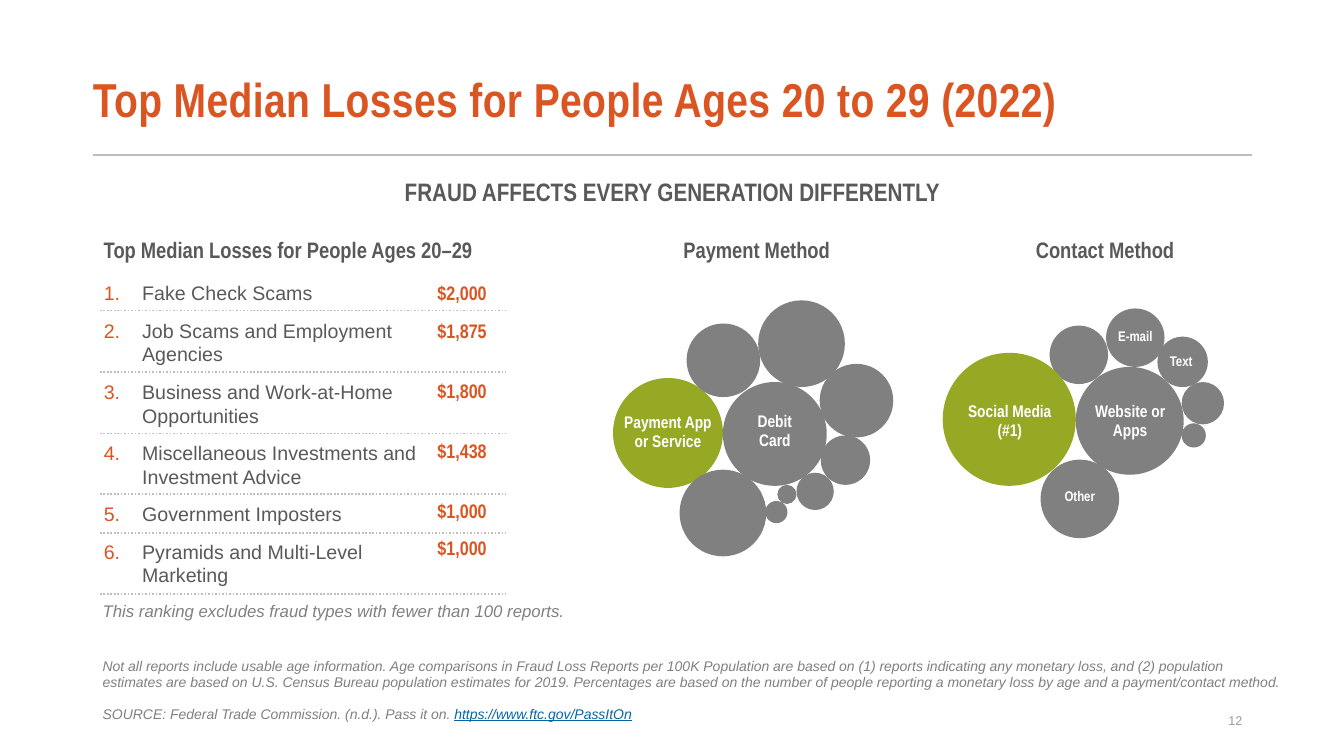
"""Build the slide on median fraud losses for people in their twenties."""
from lxml.etree import SubElement
from pptx import Presentation
from pptx.dml.color import RGBColor
from pptx.enum.dml import MSO_LINE
from pptx.enum.shapes import MSO_CONNECTOR, MSO_SHAPE
from pptx.enum.text import MSO_ANCHOR, MSO_AUTO_SIZE, PP_ALIGN
from pptx.oxml.ns import qn
from pptx.util import Inches, Pt

SANS, SLIM = "Arial", "Arial Narrow"
RUST, DARK, GREY, LIME = "DA5521", "595959", "808080", "97A825"
WHITE, BLUE = "FFFFFF", "0665A4"
LEFT, MID, RIGHT = PP_ALIGN.LEFT, PP_ALIGN.CENTER, PP_ALIGN.RIGHT
hue = RGBColor.from_string


def style(para, size, color, face, bold=False, slant=False):
    font = para.font
    font.size, font.name = Pt(size), face
    font.bold, font.italic = bold, slant
    font.color.rgb = hue(color)


def label(text, box, size, color, face=SLIM, bold=True, slant=False, align=MID):
    frame = slide.shapes.add_textbox(*map(Inches, box)).text_frame
    frame.word_wrap = True
    para = frame.paragraphs[0]
    para.text = text
    para.alignment = align
    para.line_spacing = 0.95
    style(para, size, color, face, bold, slant)
    return frame


deck = Presentation()
deck.slide_width, deck.slide_height = Inches(13.33), Inches(7.5)
slide = deck.slides.add_slide(deck.slide_layouts[1])

title, body = slide.placeholders
title.left, title.top = Inches(0.92), Inches(0.54)
title.width, title.height = Inches(11.5), Inches(0.94)
frame = title.text_frame
frame.auto_size = MSO_AUTO_SIZE.NONE
frame.vertical_anchor = MSO_ANCHOR.MIDDLE
frame.margin_left = 0
head = frame.paragraphs[0]
head.text = "Top Median Losses for People Ages 20 to 29 (2022)"
head.alignment = LEFT
head.line_spacing = 0.9
style(head, 34, RUST, SLIM, bold=True)
head.runs[0].font._element.set("spc", "30")

circles = [
    (10.67, 3.64, 1.07, GREY), (10.41, 3.23, 0.58, GREY),
    (10.97, 3.06, 0.58, GREY), (11.48, 3.34, 0.5, GREY),
    (11.72, 3.79, 0.42, GREY), (11.72, 4.2, 0.24, GREY),
    (6.08, 3.75, 1.09, LIME), (7.17, 3.79, 1.03, GREY),
    (6.74, 4.66, 0.86, GREY), (7.52, 2.98, 0.86, GREY),
    (8.13, 3.61, 0.73, GREY), (6.81, 3.21, 0.73, GREY),
    (8.14, 4.32, 0.49, GREY), (7.9, 4.69, 0.37, GREY),
    (7.71, 4.81, 0.19, GREY), (7.59, 4.97, 0.22, GREY),
    (9.35, 3.5, 1.32, LIME), (10.32, 4.56, 0.78, GREY),
]
for x, y, size, color in circles:
    dot = slide.shapes.add_shape(
        MSO_SHAPE.OVAL, Inches(x), Inches(y), Inches(size), Inches(size))
    dot.shadow.inherit = False
    dot.fill.solid()
    dot.fill.fore_color.rgb = hue(color)
    dot.line.fill.background()

tags = [
    ("Payment App or Service", (6.08, 4.05, 1.09, 0.48), 12),
    ("Debit\nCard", (7.14, 4.04, 1.09, 0.48), 12),
    ("Social Media\n(#1)", (9.47, 3.94, 1.09, 0.48), 12),
    ("Website or Apps", (10.68, 3.94, 1.06, 0.48), 12),
    ("E-mail", (10.97, 3.21, 0.58, 0.26), 10),
    ("Text", (11.48, 3.46, 0.47, 0.26), 10),
    ("Other", (10.31, 4.8, 0.8, 0.26), 10),
]
for text, box, size in tags:
    label(text, box, size, WHITE)

label("FRAUD AFFECTS EVERY GENERATION DIFFERENTLY",
      (0.93, 1.72, 11.48, 0.39), 18, DARK)
label("Top Median Losses for People Ages 20–29",
      (0.93, 2.31, 4.55, 0.36), 16, DARK, align=LEFT)
label("Payment Method", (6.16, 2.31, 2.69, 0.36), 16, DARK)
label("Contact Method", (9.42, 2.31, 3.08, 0.36), 16, DARK)

losses = [
    ("Fake Check Scams", "$2,000", 0),
    ("Job Scams and Employment Agencies", "$1,875", 0),
    ("Business and Work-at-Home Opportunities", "$1,800", 16),
    ("Miscellaneous Investments and Investment Advice", "$1,438", 16),
    ("Government Imposters", "$1,000", 16),
    ("Pyramids and Multi-Level Marketing", "$1,000", 0),
]
body.left, body.top = Inches(0.93), Inches(2.74)
body.width, body.height = Inches(3.33), Inches(3.16)
names = body.text_frame
names.auto_size = MSO_AUTO_SIZE.NONE
sums = slide.shapes.add_textbox(
    Inches(4.24), Inches(2.74), Inches(1.45), Inches(2.92)).text_frame
sums.word_wrap = True
for i, (name, loss, gap) in enumerate(losses):
    item = names.add_paragraph() if i else names.paragraphs[0]
    item.text = name
    props = item._p.get_or_add_pPr()
    props.set("marL", str(Inches(0.38)))
    props.set("indent", str(-Inches(0.38)))
    tint = SubElement(props, qn("a:buClr"))
    SubElement(tint, qn("a:srgbClr"), val=RUST)
    SubElement(props, qn("a:buFont"), typeface=SANS)
    SubElement(props, qn("a:buAutoNum"), type="arabicPeriod")
    item.space_before, item.space_after = Pt(0), Pt(10)
    style(item, 14, DARK, SANS)

    cost = sums.add_paragraph() if i else sums.paragraphs[0]
    cost.text = loss
    cost.space_before, cost.space_after = Pt(gap), Pt(10)
    style(cost, 14, RUST, SLIM, bold=True)

rules = [(0.92, 12.42, 1.54, "BDBDBD", 1.5, MSO_LINE.SOLID)]
for y in (3.08, 3.69, 4.3, 4.9, 5.29, 5.89):
    rules.append((0.99, 5.01, y, "BFBFBF", 1.25, MSO_LINE.ROUND_DOT))
for start, end, y, color, width, dash in rules:
    rule = slide.shapes.add_connector(
        MSO_CONNECTOR.STRAIGHT, Inches(start), Inches(y), Inches(end), Inches(y))
    rule.line.color.rgb = hue(color)
    rule.line.width = Pt(width)
    rule.line.dash_style = dash
    SubElement(rule._element.spPr, qn("a:effectLst"))

label("This ranking excludes fraud types with fewer than 100 reports.",
      (0.92, 5.92, 4.8, 0.29), 12, GREY, SANS, False, True, LEFT)
label("Not all reports include usable age information. Age comparisons in Fraud "
      "Loss Reports per 100K Population are based on (1) reports indicating any "
      "monetary loss, and (2) population estimates are based on U.S. Census Bureau "
      "population estimates for 2019. Percentages are based on the number of people "
      "reporting a monetary loss by age and a payment/contact method.",
      (0.92, 6.49, 11.9, 0.42), 10, GREY, SANS, False, True, LEFT)
source = label("SOURCE: Federal Trade Commission. (n.d.). Pass it on. ",
               (0.92, 6.96, 6.76, 0.26), 10, GREY, SANS, False, True, LEFT)
link = source.paragraphs[0].add_run()
link.text = "https://www.ftc.gov/PassItOn"
link.font.underline = True
link.font.color.rgb = hue(BLUE)
page = label("12", (9.42, 6.95, 3, 0.4), 9, "9B9B9B", SANS, False, align=RIGHT)
page.vertical_anchor = MSO_ANCHOR.MIDDLE

deck.save("out.pptx")
